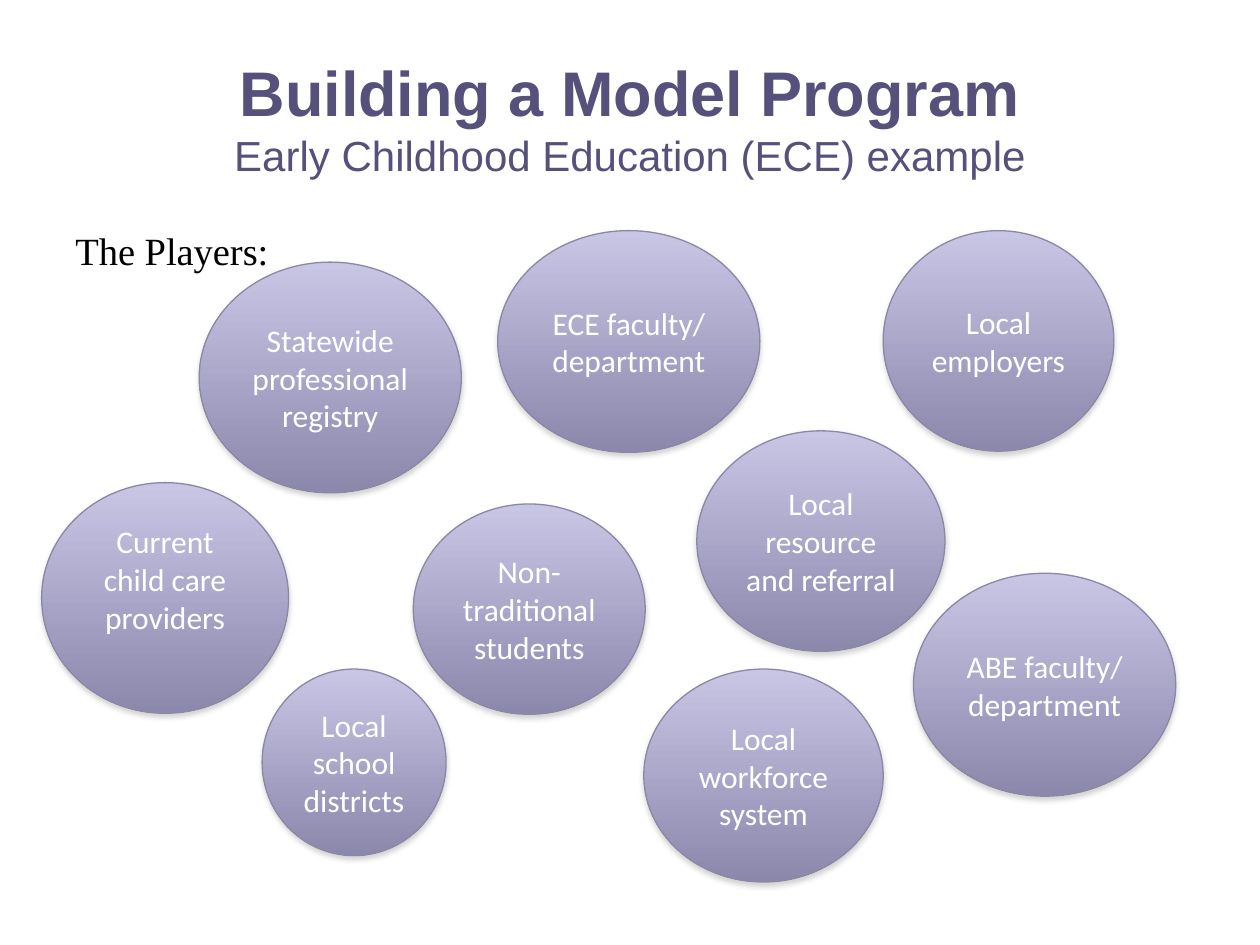
from dataclasses import dataclass

from lxml.etree import SubElement
from pptx import Presentation
from pptx.dml.color import RGBColor
from pptx.enum.shapes import MSO_SHAPE
from pptx.enum.text import MSO_ANCHOR, PP_ALIGN
from pptx.oxml.ns import qn
from pptx.util import Pt


@dataclass
class Theme:
    title: str = "55517B"
    body: str = "000000"
    label: str = "FFFFFF"
    top: str = "C8C5E5"
    bottom: str = "8C88AC"
    outline: str = "8B88A5"
    shadow: str = "808080"
    title_size: int = 36
    subtitle_size: int = 24
    body_size: int = 22
    label_size: int = 18


theme = Theme()


def set_font(font, name, size, color, bold=False):
    font.name = name
    font.size = Pt(size)
    font.bold = bold
    font.color.rgb = RGBColor.from_string(color)


def add_shadow(shape):
    shape.shadow.inherit = False
    effects = shape.element.spPr.find(qn("a:effectLst"))
    shadow = SubElement(effects, qn("a:outerShdw"), blurRad=str(Pt(3.1)),
                        dist=str(Pt(1.8)), dir="5400000", rotWithShape="0")
    color = SubElement(shadow, qn("a:srgbClr"), val=theme.shadow)
    SubElement(color, qn("a:alpha"), val="35000")


deck = Presentation()
deck.slide_width, deck.slide_height = Pt(720), Pt(540)
page = deck.slides.add_slide(deck.slide_layouts[6])

title = page.shapes.add_textbox(Pt(36), Pt(21.6), Pt(648), Pt(90)).text_frame
title.word_wrap = True
title.vertical_anchor = MSO_ANCHOR.MIDDLE
para = title.paragraphs[0]
para.alignment = PP_ALIGN.CENTER
span = para.add_run()
span.text = "Building a Model Program"
set_font(span.font, "Arial", theme.title_size, theme.title, True)
para.add_line_break()
span = para.add_run()
span.text = "Early Childhood Education (ECE) example"
set_font(span.font, "Arial", theme.subtitle_size, theme.title)

body = page.shapes.add_textbox(Pt(36), Pt(126), Pt(648), Pt(356.4)).text_frame
body.word_wrap = True
para = body.paragraphs[0]
para.text = "The Players:"
para.space_after = Pt(4)
set_font(para.font, "Times New Roman", theme.body_size, theme.body)

line_height = 21.6
players = [
    ("Statewide professional registry", 113.8, 149.8, 149.8, 131.8, 0),
    ("Current child care providers", 23.8, 275.8, 141.1, 131.8, line_height),
    ("ECE faculty/ department", 284.4, 131.8, 149.8, 126.7, 0),
    ("Local employers", 504.7, 131.8, 131.8, 126, 0),
    ("ABE faculty/ department", 522, 327.6, 149.8, 127.4, 0),
    ("Non-traditional students", 236.2, 288, 132.5, 120.2, 0),
    ("Local workforce system", 367.9, 382.3, 136.8, 121.7, 0),
    ("Local resource and referral", 398.2, 246.2, 141.8, 126, 0),
    ("Local school districts", 149.8, 382.3, 105.1, 106.6, 0),
]
for name, left, top, width, height, lift in players:
    bubble = page.shapes.add_shape(MSO_SHAPE.OVAL, Pt(left), Pt(top), Pt(width), Pt(height))
    bubble.fill.gradient()
    bubble.fill.gradient_angle = 270
    for stop, color in zip(bubble.fill.gradient_stops, (theme.top, theme.bottom)):
        stop.color.rgb = RGBColor.from_string(color)
    bubble.line.color.rgb = RGBColor.from_string(theme.outline)
    bubble.line.width = Pt(0.75)
    add_shadow(bubble)
    frame = bubble.text_frame
    frame.word_wrap = True
    frame.vertical_anchor = MSO_ANCHOR.MIDDLE
    frame.margin_bottom = Pt(3.6 + lift)
    para = frame.paragraphs[0]
    para.text = name
    para.alignment = PP_ALIGN.CENTER
    set_font(para.font, "Calibri", theme.label_size, theme.label)

deck.save("out.pptx")
